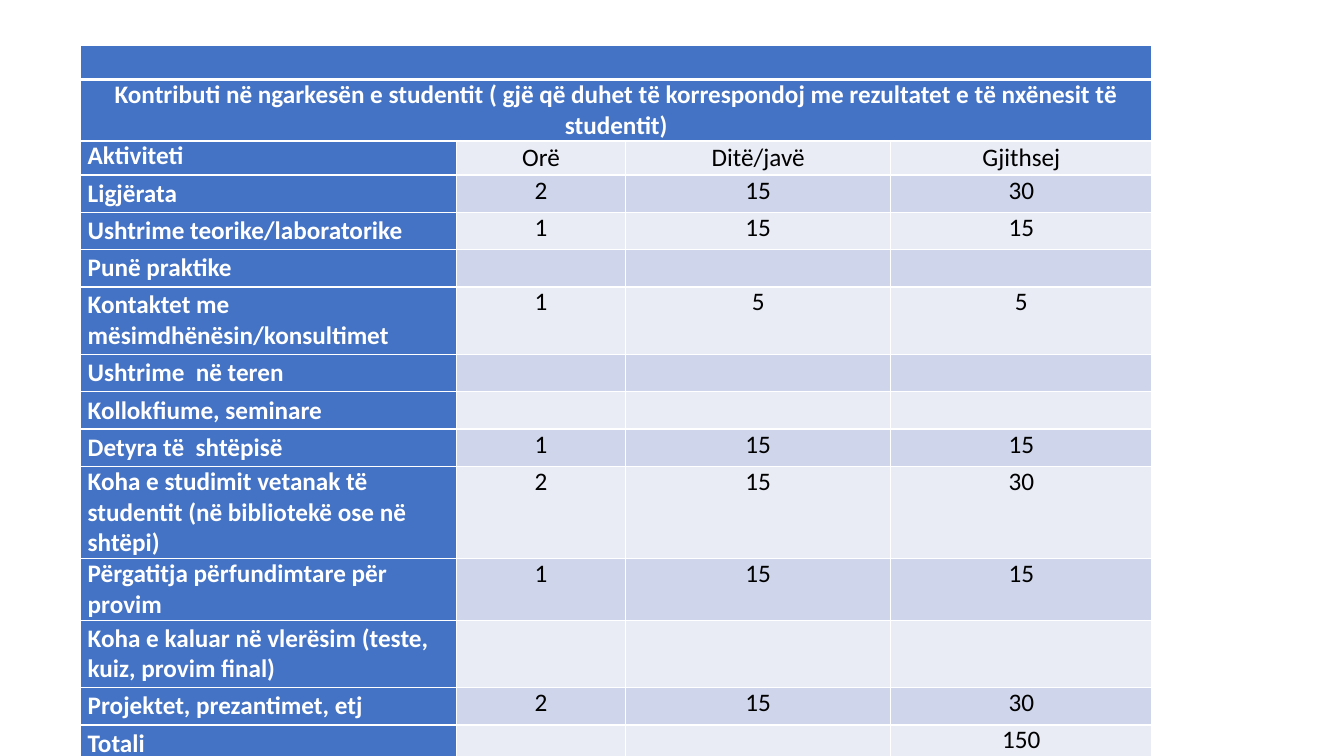
from lxml.etree import SubElement
from pptx import Presentation
from pptx.dml.color import RGBColor
from pptx.enum.text import MSO_ANCHOR as Anchor, PP_ALIGN as Align
from pptx.oxml.ns import qn
from pptx.util import Cm, Pt

BLUE, BAND_DARK, BAND_LIGHT = "4472C4", "CFD5EA", "E9EBF5"
WHITE, BLACK = "FFFFFF", "000000"

TITLE = ("Kontributi nё ngarkesën e studentit ( gjë që duhet tё korrespondoj "
         "me rezultatet e tё nxënesit tё studentit)")
NO_HOURS = ("", "", "")
# Activity, (hours, days/weeks, total), row height in cm
ACTIVITIES = [
    ("Aktiviteti", ("Orë", "Ditë/javë", "Gjithsej"), 0.86),
    ("Ligjërata", ("2", "15", "30"), 0.94),
    ("Ushtrime teorike/laboratorike", ("1", "15", "15"), 0.94),
    ("Punë praktike", NO_HOURS, 0.94),
    ("Kontaktet me mësimdhënësin/konsultimet", ("1", "5", "5"), 1.7),
    ("Ushtrime  në teren", NO_HOURS, 0.94),
    ("Kollokfiume, seminare", NO_HOURS, 0.94),
    ("Detyra të  shtëpisë", ("1", "15", "15"), 0.94),
    ("Koha e studimit vetanak të studentit (në bibliotekë ose në shtëpi)",
     ("2", "15", "30"), 1.7),
    ("Përgatitja përfundimtare për provim", ("1", "15", "15"), 0.94),
    ("Koha e kaluar në vlerësim (teste, kuiz, provim final)", NO_HOURS, 1.7),
    ("Projektet, prezantimet, etj", ("2", "15", "30"), 0.94),
    ("Totali", ("", "", "150"), 0.94),
]
COLUMN_WIDTHS = (9.47, 4.27, 6.68, 6.58)
TITLE_ROW_HEIGHTS = (0.86, 0.94)

CELL_FORMAT = {"margin_left": Cm(0.18), "margin_right": Cm(0.18),
               "margin_top": Cm(0), "margin_bottom": Cm(0)}
LABEL_FONT = {"name": "Calibri", "size": Pt(18), "bold": True}
VALUE_FONT = {**LABEL_FONT, "bold": False}


def color(hex_value):
    return RGBColor.from_string(hex_value)


def set_format(target, values):
    for name, value in values.items():
        setattr(target, name, value)


def set_borders(cell, top=1, bottom=1):
    """Draw white cell borders; the widths are in points."""
    properties = cell._tc.get_or_add_tcPr()
    for side, width in (("L", 1), ("R", 1), ("T", top), ("B", bottom)):
        line = SubElement(properties, qn(f"a:ln{side}"), w=str(Pt(width)))
        fill = SubElement(line, qn("a:solidFill"))
        SubElement(fill, qn("a:srgbClr"), val=WHITE)


def fill_cell(cell, text, background, text_color, font,
              align=Align.CENTER, anchor=Anchor.TOP, **borders):
    set_format(cell, {**CELL_FORMAT, "vertical_anchor": anchor})
    set_borders(cell, **borders)
    cell.fill.solid()
    cell.fill.fore_color.rgb = color(background)
    paragraph = cell.text_frame.paragraphs[0]
    paragraph.alignment = align
    if text:
        run = paragraph.add_run()
        run.text = text
        set_format(run.font, font)
        run.font.color.rgb = color(text_color)


def add_title_rows(table):
    last_column = len(COLUMN_WIDTHS) - 1
    for row, (text, borders) in enumerate([("", {"bottom": 3}),
                                           (TITLE, {"top": 3})]):
        for column in range(last_column + 1):
            fill_cell(table.cell(row, column), text if column == 0 else "",
                      BLUE, WHITE, LABEL_FONT, **borders)
        table.cell(row, 0).merge(table.cell(row, last_column))


def add_activity_rows(table):
    first_row = len(TITLE_ROW_HEIGHTS)
    for index, (activity, values, _) in enumerate(ACTIVITIES):
        row = first_row + index
        is_heading = index == 0
        fill_cell(table.cell(row, 0), activity, BLUE, WHITE, LABEL_FONT,
                  Align.LEFT, Anchor.TOP if is_heading else Anchor.MIDDLE)
        band = BAND_DARK if index % 2 else BAND_LIGHT
        for column, value in enumerate(values, start=1):
            fill_cell(table.cell(row, column), value, band, BLACK, VALUE_FONT,
                      anchor=Anchor.MIDDLE if is_heading else Anchor.TOP)


def add_workload_table(slide):
    heights = [*TITLE_ROW_HEIGHTS, *(height for _, _, height in ACTIVITIES)]
    table = slide.shapes.add_table(
        len(heights), len(COLUMN_WIDTHS), Cm(2.03), Cm(1.14),
        Cm(sum(COLUMN_WIDTHS)), Cm(sum(heights))).table
    for column, width in zip(table.columns, COLUMN_WIDTHS):
        column.width = Cm(width)
    for row, height in zip(table.rows, heights):
        row.height = Cm(height)
    add_title_rows(table)
    add_activity_rows(table)


def main():
    presentation = Presentation()
    set_format(presentation, {"slide_width": Cm(33.87),
                              "slide_height": Cm(19.05)})
    slide = presentation.slides.add_slide(presentation.slide_layouts[6])
    add_workload_table(slide)
    presentation.save("out.pptx")


if __name__ == "__main__":
    main()
